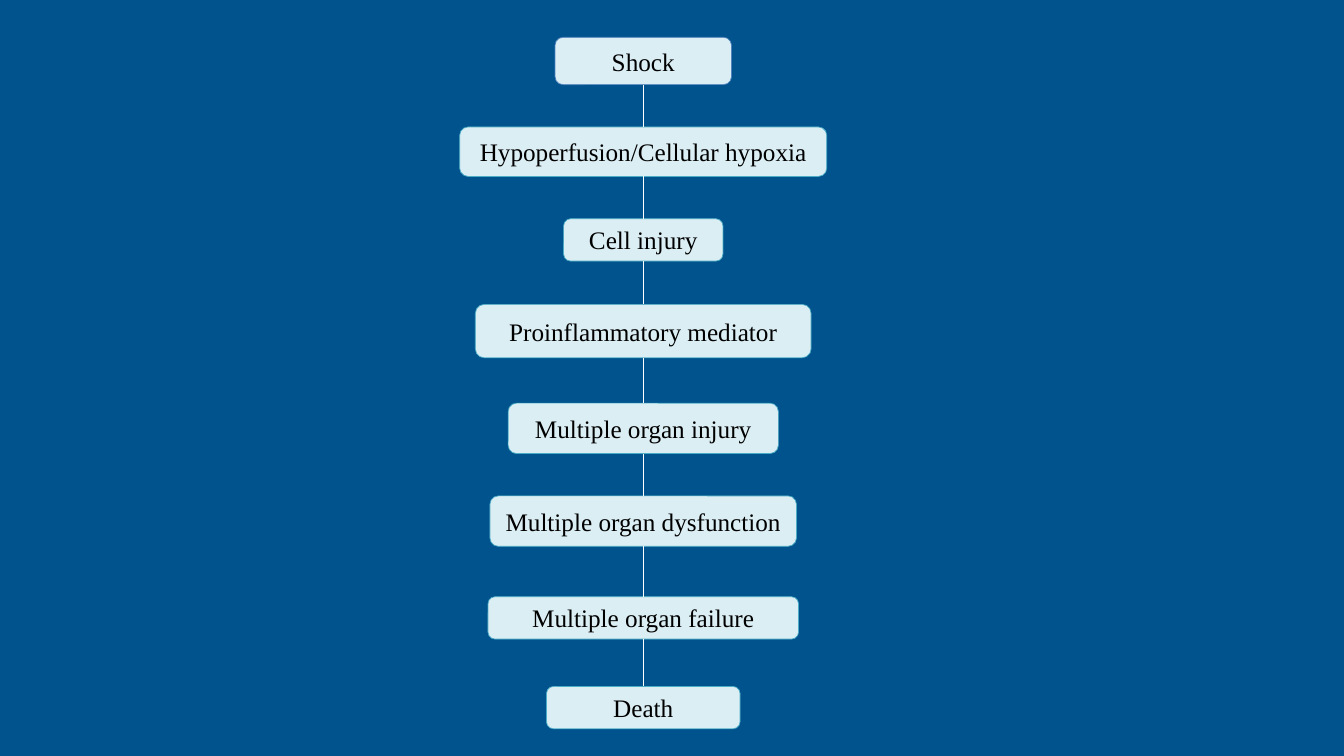
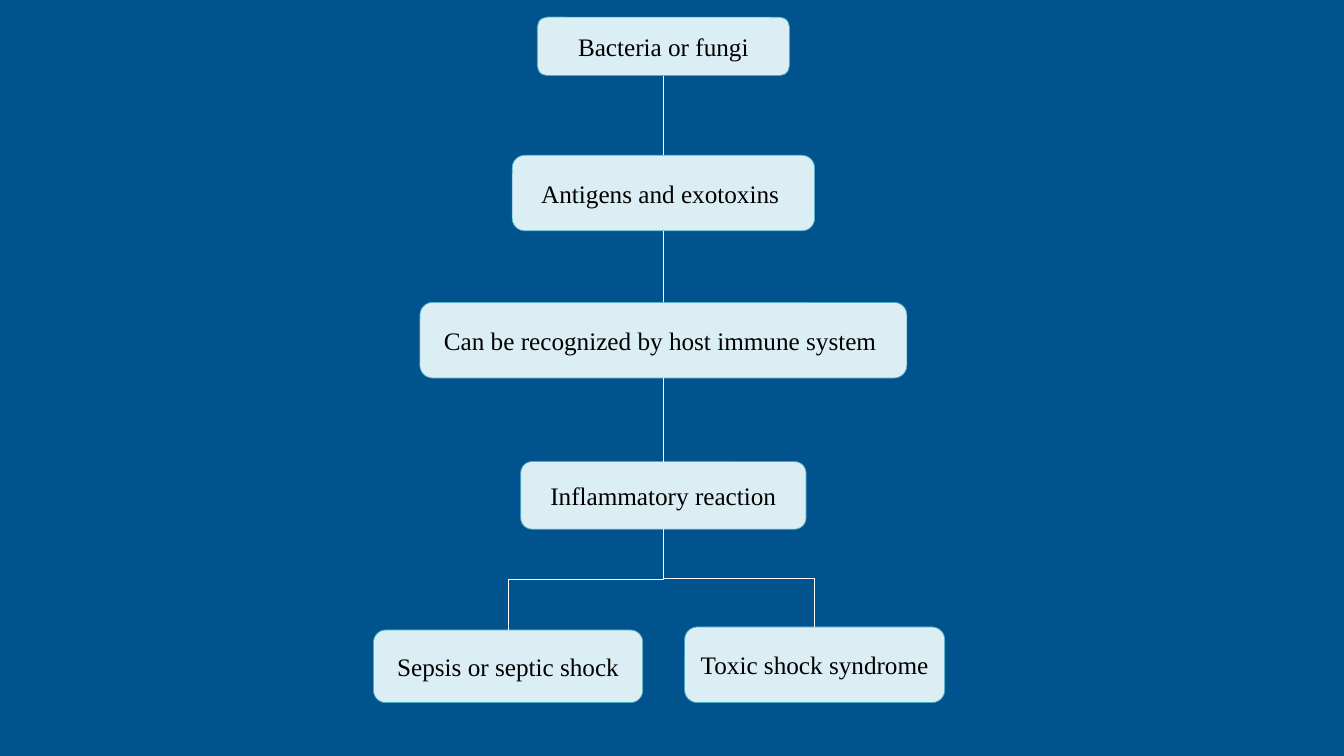
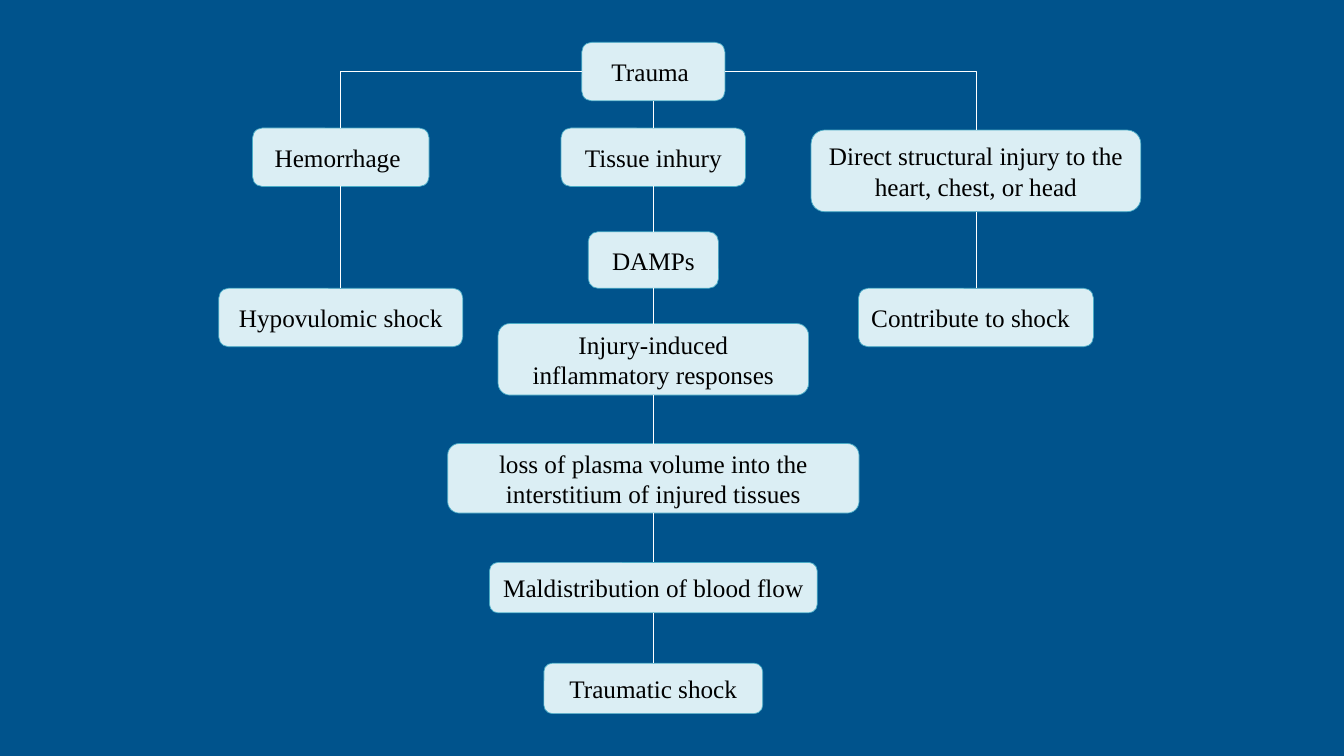
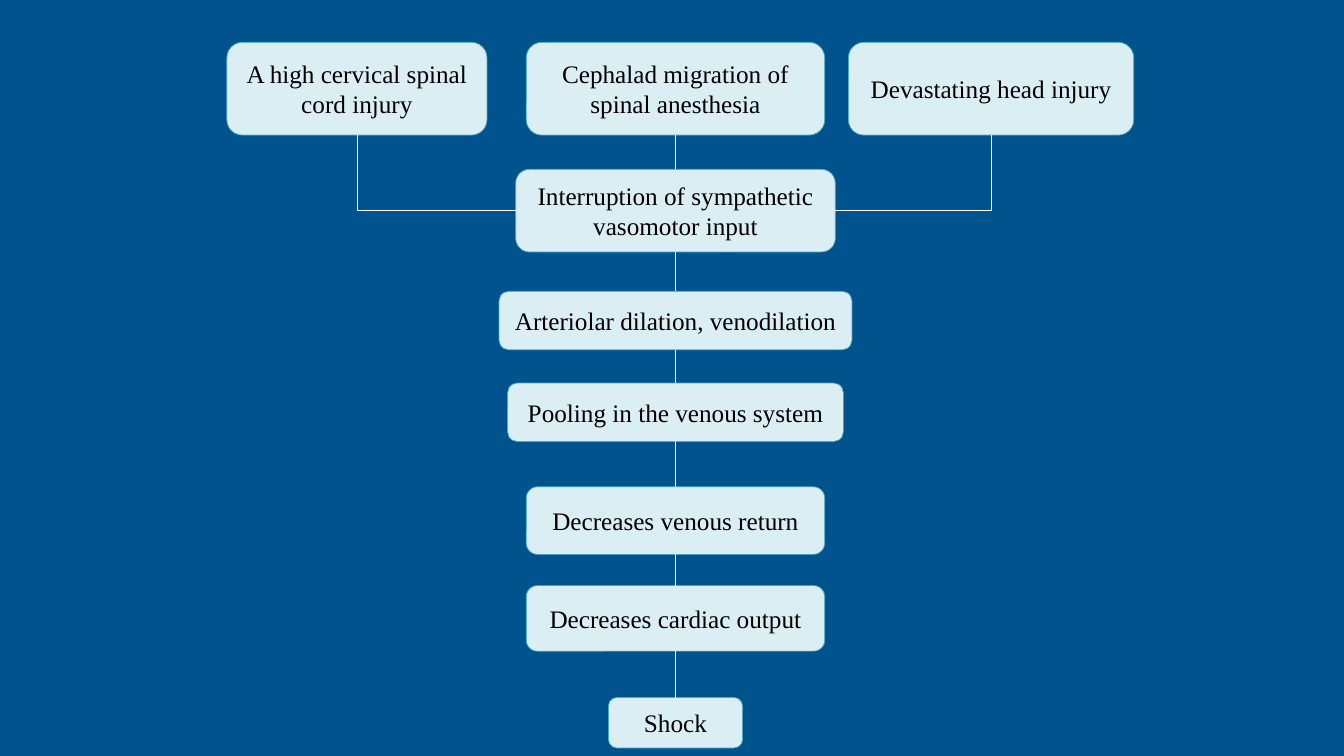
"""Build four flowcharts on how shock, infection, trauma and nerve injury unfold."""
from dataclasses import dataclass
from itertools import pairwise

from lxml import etree
from pptx import Presentation
from pptx.dml.color import RGBColor
from pptx.enum.shapes import MSO_CONNECTOR, MSO_SHAPE
from pptx.enum.text import MSO_ANCHOR, PP_ALIGN
from pptx.oxml.ns import qn
from pptx.util import Inches, Pt

ROUNDED = MSO_SHAPE.ROUNDED_RECTANGLE
STRAIGHT, ELBOW = MSO_CONNECTOR.STRAIGHT, MSO_CONNECTOR.ELBOW
MIDDLE = MSO_ANCHOR.MIDDLE
CENTER, LEFT_ALIGNED = PP_ALIGN.CENTER, PP_ALIGN.LEFT
TOP, LEFT, BOTTOM, RIGHT = range(4)
QUARTER_TURN = "5400000"


@dataclass(frozen=True)
class Theme:
    background: RGBColor = RGBColor.from_string("00538C")
    box: RGBColor = RGBColor.from_string("DBEEF4")
    outline: RGBColor = RGBColor.from_string("4BACC6")
    start_outline: RGBColor = RGBColor.from_string("4F81BD")
    link: RGBColor = RGBColor.from_string("FFFFFF")
    text: RGBColor = RGBColor.from_string("000000")
    font: str = "Times New Roman"
    size: Pt = Pt(18)
    line: Pt = Pt(0.5)


THEME = Theme()

# Column: centre x, then steps as (text, top, width, height).
# Elbow: parent text, parent side, child text, child side.
FLOWCHARTS = [
    {
        "columns": [
            (6.38, [
                ("Shock", 0.37, 1.75, 0.47),
                ("Hypoperfusion/Cellular hypoxia", 1.26, 3.64, 0.49),
                ("Cell injury", 2.17, 1.58, 0.42),
                ("Proinflammatory mediator", 3.02, 3.33, 0.53),
                ("Multiple organ injury", 4, 2.68, 0.5),
                ("Multiple organ dysfunction", 4.92, 3.04, 0.5),
                ("Multiple organ failure", 5.92, 3.08, 0.42),
                ("Death", 6.81, 1.92, 0.42),
            ]),
        ],
        "elbows": [],
    },
    {
        "columns": [
            (6.58, [
                ("Bacteria or fungi", 0.17, 2.5, 0.58),
                ("Antigens and exotoxins ", 1.54, 3, 0.75),
                ("Can be recognized by host immune system ", 3, 4.83, 0.75),
                ("Inflammatory reaction", 4.58, 2.83, 0.67),
            ]),
            (5.04, [("Sepsis or septic shock", 6.25, 2.67, 0.72)]),
            (8.08, [("Toxic shock syndrome", 6.22, 2.58, 0.75)]),
        ],
        "elbows": [
            ("Inflammatory reaction", BOTTOM, "Sepsis or septic shock", TOP),
            ("Inflammatory reaction", BOTTOM, "Toxic shock syndrome", TOP),
        ],
    },
    {
        "columns": [
            (6.48, [
                ("Trauma ", 0.42, 1.42, 0.58),
                ("Tissue inhury", 1.27, 1.83, 0.58),
                ("DAMPs", 2.3, 1.29, 0.56),
                ("Injury-induced\ninflammatory responses", 3.21, 3.08, 0.71),
                ("loss of plasma volume into the interstitium of injured tissues",
                 4.4, 4.08, 0.69),
                ("Maldistribution of blood flow", 5.58, 3.25, 0.5),
                ("Traumatic shock", 6.58, 2.17, 0.5),
            ]),
            (3.38, [
                ("Hemorrhage ", 1.27, 1.75, 0.58),
                ("Hypovulomic shock", 2.86, 2.42, 0.58),
            ]),
            (9.68, [
                ("Direct structural injury to the heart, chest, or head",
                 1.29, 3.27, 0.81),
                ("Contribute to shock", 2.86, 2.33, 0.58),
            ]),
        ],
        "elbows": [
            ("Trauma ", LEFT, "Hemorrhage ", TOP),
            ("Trauma ", RIGHT,
             "Direct structural injury to the heart, chest, or head", TOP),
        ],
    },
    {
        "columns": [
            (6.7, [
                ("Cephalad migration of spinal anesthesia", 0.42, 2.96, 0.92),
                ("Interruption of sympathetic vasomotor input", 1.68, 3.17, 0.82),
                ("Arteriolar dilation, venodilation", 2.89, 3.5, 0.58),
                ("Pooling in the venous system", 3.8, 3.33, 0.58),
                ("Decreases venous return", 4.83, 2.96, 0.67),
                ("Decreases cardiac output", 5.81, 2.96, 0.65),
                ("Shock", 6.92, 1.33, 0.5),
            ]),
            (3.54, [("A high cervical spinal\ncord injury", 0.42, 2.58, 0.92)]),
            (9.83, [("Devastating head injury", 0.42, 2.83, 0.92)]),
        ],
        "elbows": [
            ("Interruption of sympathetic vasomotor input", LEFT,
             "A high cervical spinal\ncord injury", BOTTOM),
            ("Interruption of sympathetic vasomotor input", RIGHT,
             "Devastating head injury", BOTTOM),
        ],
    },
]


def add_step(slide, text, center, top, width, height):
    step = slide.shapes.add_shape(
        ROUNDED, Inches(center - width / 2), Inches(top), Inches(width), Inches(height))
    step.shadow.inherit = False
    step.fill.solid()
    step.fill.fore_color.rgb = THEME.box
    step.line.color.rgb = THEME.outline
    step.line.width = THEME.line
    step.text_frame.text = text
    step.text_frame.word_wrap = True
    step.text_frame.vertical_anchor = MIDDLE
    for paragraph in step.text_frame.paragraphs:
        paragraph.alignment = CENTER
        paragraph.font.name = THEME.font
        paragraph.font.size = THEME.size
        paragraph.font.color.rgb = THEME.text
    return step


def add_link(slide, kind, parent, parent_side, child, child_side):
    link = slide.shapes.add_connector(kind, 0, 0, 0, 0)
    link.begin_connect(parent, parent_side)
    link.end_connect(child, child_side)
    link.line.color.rgb = THEME.link
    link.line.width = THEME.line
    etree.SubElement(link.element.spPr, qn("a:effectLst"))
    return link


prs = Presentation()
prs.slide_width, prs.slide_height = Inches(13.33), Inches(7.5)
prs.slide_master.background.fill.solid()
prs.slide_master.background.fill.fore_color.rgb = THEME.background
blank_layout = prs.slide_layouts[6]

flowchart_steps = []
for flowchart in FLOWCHARTS:
    slide = prs.slides.add_slide(blank_layout)
    steps = {}
    for center, column in flowchart["columns"]:
        for text, top, width, height in column:
            steps[text] = add_step(slide, text, center, top, width, height)
        for upper, lower in pairwise(column):
            add_link(slide, STRAIGHT, steps[upper[0]], BOTTOM, steps[lower[0]], TOP)

    for parent, parent_side, child, child_side in flowchart["elbows"]:
        elbow = add_link(
            slide, ELBOW, steps[parent], parent_side, steps[child], child_side)
        properties = elbow.element.spPr
        if parent_side != BOTTOM:
            properties.prstGeom.set("prst", "bentConnector2")
            continue
        goes_right = elbow.end_x > elbow.begin_x
        width, height = elbow.width, elbow.height
        elbow.left += (width - height) // 2
        elbow.top += (height - width) // 2
        elbow.width, elbow.height = height, width
        properties.xfrm.set("rot", QUARTER_TURN)
        properties.xfrm.set("flipH", "0")
        properties.xfrm.set("flipV", str(int(goes_right)))
    flowchart_steps.append(steps)

shock_steps, _, trauma_steps, _ = flowchart_steps
shock_steps["Shock"].line.color.rgb = THEME.start_outline
trauma_steps["Contribute to shock"].text_frame.paragraphs[0].alignment = LEFT_ALIGNED

prs.save("out.pptx")
